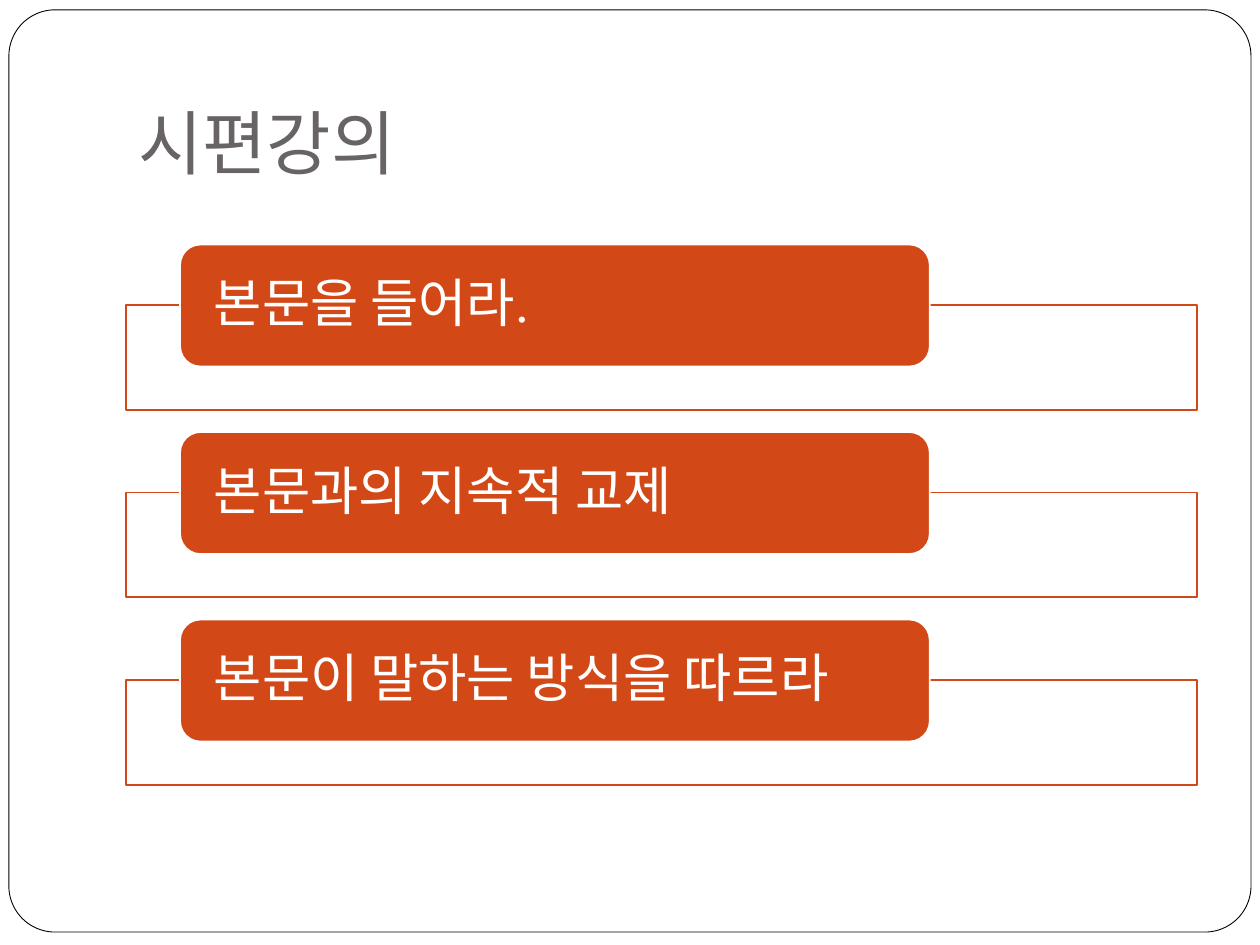
from lxml import etree
from pptx import Presentation
from pptx.dml.color import RGBColor
from pptx.enum.shapes import MSO_SHAPE as SHAPE
from pptx.enum.text import MSO_ANCHOR as ANCHOR, PP_ALIGN as ALIGN
from pptx.oxml.ns import qn
from pptx.util import Cm, Pt

COLORS = {"white": "FFFFFF", "black": "000000", "orange": "D34817", "gray": "696464"}
TITLE = "시편강의"
POINTS = ["본문을 들어라.", "본문과의 지속적 교제", "본문이 말하는 방식을 따르라"]
ROW_PITCH = 3.78


def rgb(name):
    return RGBColor.from_string(COLORS[name])


def add_box(slide, kind, box, fill, line, width):
    sp = slide.shapes.add_shape(kind, *map(Cm, box))
    sp.shadow.inherit = False
    sp.fill.solid()
    sp.fill.fore_color.rgb = rgb(fill)
    sp.line.color.rgb = rgb(line)
    sp.line.width = Pt(width)
    return sp


def add_text(slide, box, text, font, frame, line_spacing=1.0):
    """Place one paragraph; font and frame hold format values."""
    tf = slide.shapes.add_textbox(*map(Cm, box)).text_frame
    for name, value in {"word_wrap": True, **frame}.items():
        setattr(tf, name, value)
    p = tf.paragraphs[0]
    p.alignment = ALIGN.LEFT
    p.line_spacing = line_spacing
    r = p.add_run()
    r.text = text
    color = font["color"]
    for name in ("name", "size"):
        setattr(r.font, name, font[name])
    r.font.color.rgb = rgb(color)


def add_frame(slide, box):
    sp = add_box(slide, SHAPE.ROUNDED_RECTANGLE, box, "white", "black", 0.5)
    sp.adjustments[0] = 0.05


def add_title(slide, box):
    font = {"name": "Cabin", "size": Pt(40), "color": "gray"}
    frame = {"vertical_anchor": ANCHOR.BOTTOM, "margin_left": Cm(0.25),
             "margin_right": Cm(0.25), "margin_top": Cm(0.13), "margin_bottom": Cm(0.25)}
    add_text(slide, box, TITLE, font, frame)


def add_point(slide, box, text):
    """Draw an outlined band with a rounded label over its top edge."""
    left, top, width, height = box
    drop, indent, pad = 1.22, 1.09, 0.12
    label_w, label_h = width * 0.7, 2.46

    band = add_box(slide, SHAPE.RECTANGLE, (left, top + drop, width, height - drop),
                   "white", "orange", 1)
    color = band.fill._xPr.find(qn("a:solidFill")).find(qn("a:srgbClr"))
    etree.SubElement(color, qn("a:alpha"), val="90000")

    add_box(slide, SHAPE.ROUNDED_RECTANGLE, (left + indent, top, label_w, label_h),
            "orange", "white", 1)
    font = {"name": "Times New Roman", "size": Pt(30), "color": "white"}
    frame = {"vertical_anchor": ANCHOR.MIDDLE, "margin_left": Cm(0.56),
             "margin_right": Cm(0.56), "margin_top": 0, "margin_bottom": 0}
    text_box = (left + indent + pad, top + pad, label_w - 2 * pad, label_h - 2 * pad)
    add_text(slide, text_box, text, font, frame, line_spacing=0.9)


def main():
    prs = Presentation()
    prs.slide_width, prs.slide_height = Cm(25.4), Cm(19.05)
    slide = prs.slides.add_slide(prs.slide_layouts[6])
    slide.background.fill.solid()
    slide.background.fill.fore_color.rgb = rgb("white")
    add_frame(slide, (0.18, 0.2, 25.04, 18.59))
    add_title(slide, (2.54, 0.76, 21.59, 3.18))
    for i, text in enumerate(POINTS):
        add_point(slide, (2.54, 4.93 + i * ROW_PITCH, 21.59, 3.33), text)
    prs.save("out.pptx")


if __name__ == "__main__":
    main()
